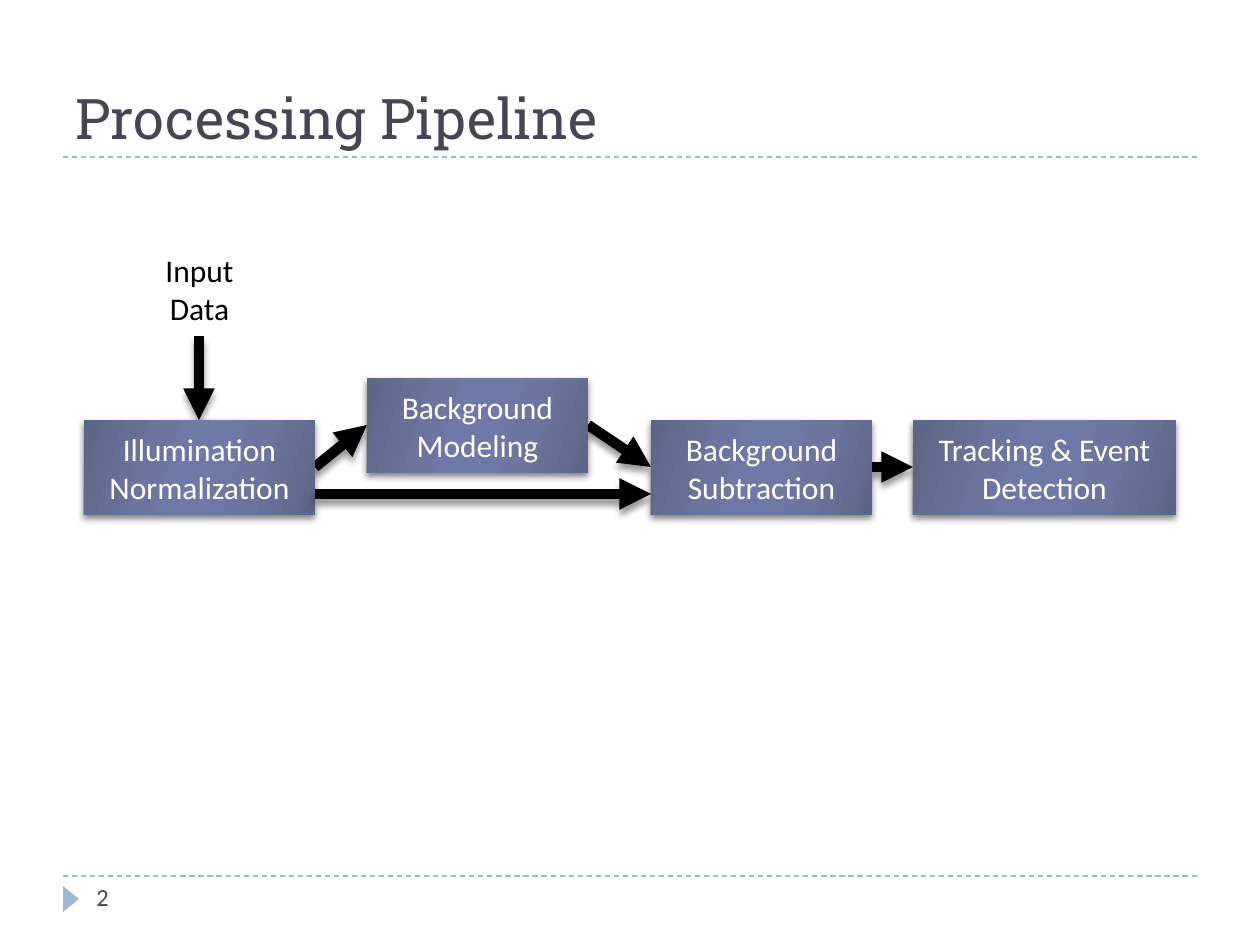
from lxml import etree
from pptx import Presentation
from pptx.dml.color import RGBColor as RGB
from pptx.enum.dml import MSO_LINE as Dash
from pptx.enum.shapes import MSO_CONNECTOR as Conn, MSO_SHAPE as Shape
from pptx.enum.text import MSO_ANCHOR as Anchor, PP_ALIGN as Align
from pptx.oxml import parse_xml
from pptx.oxml.ns import nsdecls, qn
from pptx.util import Emu, Pt

PX_PER_INCH = 126
COLORS = {"title": "464653", "accent": "9FB8CD", "black": "000000", "white": "FFFFFF"}
GRADIENT = [(0, "5D6585"), (30, "6B759E"), (45, "6E79A7"),
            (55, "6E79A7"), (73, "6B759E"), (100, "5D6585")]
BODY, HEAD = "Calibri", "Roboto Slab"


def px(n):
    return Emu(round(n * 914400 / PX_PER_INCH))


def rgb(name):
    return RGB.from_string(COLORS[name])


class Deck:
    def __init__(self, width, height):
        self.prs = Presentation()
        self.prs.slide_width, self.prs.slide_height = px(width), px(height)
        self.s = self.prs.slides.add_slide(self.prs.slide_layouts[6])

    def add_lines(self, sp, lines, size, color, font=BODY, align=Align.LEFT,
                  anchor=Anchor.TOP, wrap=True):
        tf = sp.text_frame
        tf.word_wrap, tf.vertical_anchor = wrap, anchor
        for i, line in enumerate(lines):
            p = tf.add_paragraph() if i else tf.paragraphs[0]
            p.alignment = align
            r = p.add_run()
            r.text = line
            r.font.size, r.font.name = Pt(size), font
            r.font.color.rgb = rgb(color)

    def text(self, box, line, size, color, **style):
        sp = self.s.shapes.add_textbox(*map(px, box))
        self.add_lines(sp, [line], size, color, **style)

    def effects(self, sp, alpha=0, distance=0):
        """Set a downward black shadow, or none when alpha is 0."""
        pr = sp._element.spPr
        for old in pr.findall(qn("a:effectLst")):
            pr.remove(old)
        shadow = (f'<a:outerShdw blurRad="{Pt(4)}" dist="{Pt(distance)}" dir="5400000" '
                  f'rotWithShape="0"><a:srgbClr val="{COLORS["black"]}">'
                  f'<a:alpha val="{alpha * 1000}"/></a:srgbClr></a:outerShdw>')
        pr.append(parse_xml(f'<a:effectLst {nsdecls("a")}>{shadow if alpha else ""}</a:effectLst>'))

    def line(self, start, end, color, width):
        ln = self.s.shapes.add_connector(Conn.STRAIGHT, *map(px, start + end))
        ln.line.color.rgb, ln.line.width = rgb(color), Pt(width)
        return ln

    def rule(self, y):
        ln = self.line((63, y), (1197, y), "accent", 0.75)
        ln.line.dash_style = Dash.DASH
        self.effects(ln)

    def arrow(self, start, end):
        ln = self.line(start, end, "black", 6)
        etree.SubElement(ln._element.spPr.find(qn("a:ln")), qn("a:tailEnd"), type="triangle")
        self.effects(ln, 40, 3.4)

    def marker(self, box):
        sp = self.s.shapes.add_shape(Shape.ISOSCELES_TRIANGLE, *map(px, box))
        sp.rotation = 90
        sp.fill.solid()
        sp.fill.fore_color.rgb = rgb("accent")
        sp.line.fill.background()
        sp.shadow.inherit = False

    def stage(self, box, lines, wrap=False):
        sp = self.s.shapes.add_shape(Shape.RECTANGLE, *map(px, box))
        sp.line.fill.background()
        stops = "".join(f'<a:gs pos="{pos * 1000}"><a:srgbClr val="{c}"/></a:gs>'
                        for pos, c in GRADIENT)
        sp._element.spPr.find(qn("a:prstGeom")).addnext(parse_xml(
            f'<a:gradFill {nsdecls("a")} rotWithShape="1"><a:gsLst>{stops}</a:gsLst>'
            f'<a:lin ang="{16 * 60000}" scaled="0"/></a:gradFill>'))
        self.effects(sp, 50, 2)
        self.add_lines(sp, lines, 18, "white", align=Align.CENTER,
                       anchor=Anchor.MIDDLE, wrap=wrap)


def main():
    d = Deck(1260, 945)
    for y in (876, 157):
        d.rule(y)
    d.marker((58, 891, 26, 16))
    d.text((63, 21, 1134, 136), "Processing Pipeline", 32, "title",
           font=HEAD, anchor=Anchor.BOTTOM)
    d.text((84, 876, 273, 50), "2", 14, "title")

    row, raised, height = 420, 378, 95
    middle, raised_middle, bypass = row + 47, raised + 47, 494
    d.stage((913, row, 263, height), ["Tracking & Event Detection"], wrap=True)
    for start, end in [((199, 336), (199, row)),
                       ((315, middle), (367, raised_middle)),
                       ((872, middle), (913, middle)),
                       ((588, raised_middle), (651, middle))]:
        d.arrow(start, end)
    d.text((126, 242, 147, 94), "Input Data", 18, "black",
           align=Align.CENTER, anchor=Anchor.MIDDLE)
    d.stage((651, row, 221, height), ["Background Subtraction"], wrap=True)
    d.stage((367, raised, 221, height), ["Background", "Modeling"])
    d.stage((84, row, 231, height), ["Illumination", "Normalization"])
    d.arrow((315, bypass), (651, bypass))
    d.prs.save("out.pptx")


if __name__ == "__main__":
    main()
